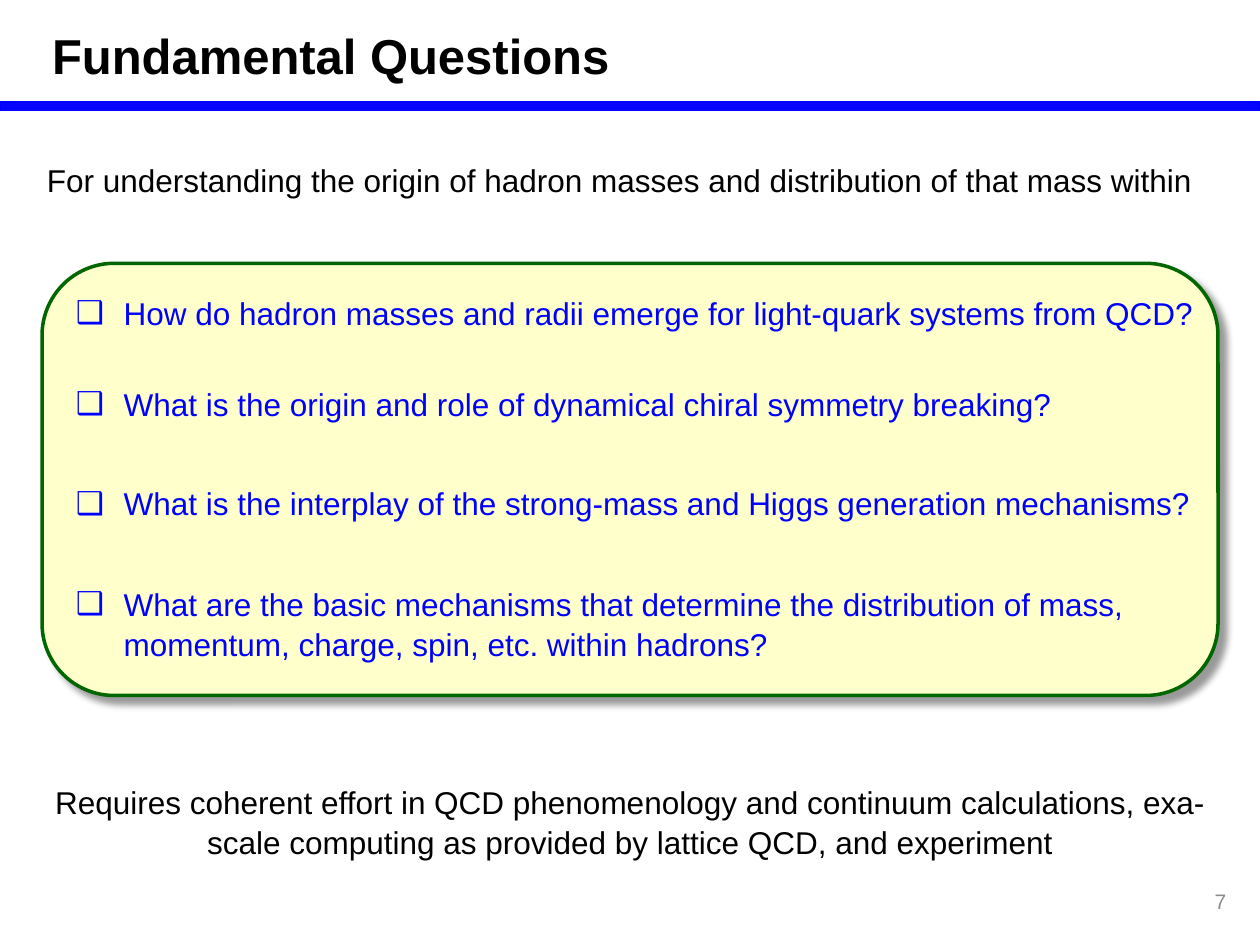
from lxml import etree
from pptx import Presentation
from pptx.dml.color import RGBColor
from pptx.enum.shapes import MSO_SHAPE
from pptx.enum.text import MSO_ANCHOR, PP_ALIGN
from pptx.oxml.ns import qn
from pptx.util import Inches, Pt

LEFT, MID, RIGHT = PP_ALIGN.LEFT, PP_ALIGN.CENTER, PP_ALIGN.RIGHT
TOP, CENTER = MSO_ANCHOR.TOP, MSO_ANCHOR.MIDDLE
RECT, ROUND = MSO_SHAPE.RECTANGLE, MSO_SHAPE.ROUNDED_RECTANGLE
FONT = "Arial"
WIDE, HIGH = 10, 7.5
HANG = 0.38
INSET = 0.17
COLORS = {
    "ink": "000000",
    "blue": "0000FF",
    "rule": "0505FF",
    "cream": "FFFFCC",
    "green": "006600",
    "gray": "8C8C8C",
}
ITEMS = [
    (0.18, 0.52, "How do hadron masses and radii emerge for light-quark systems from QCD?"),
    (0.9, 0.52, "What is the origin and role of dynamical chiral symmetry breaking?"),
    (1.69, 0.52, "What is the interplay of the strong-mass and Higgs generation mechanisms?"),
    (2.49, 0.88, "What are the basic mechanisms that determine the distribution of mass, "
                 "momentum, charge, spin, etc. within hadrons?"),
]


def paint(name):
    return RGBColor.from_string(COLORS[name])


def add_mark(para):
    props = para._p.get_or_add_pPr()
    props.set("marL", str(Inches(HANG)))
    props.set("indent", str(-Inches(HANG)))
    etree.SubElement(props, qn("a:buFont")).set("typeface", FONT)
    etree.SubElement(props, qn("a:buChar")).set("char", "❑")


def add_text(slide, box, text, size=18, color="ink", align=LEFT,
             bold=False, anchor=TOP, mark=False, pitch=1.05):
    frame = slide.shapes.add_textbox(*map(Inches, box)).text_frame
    frame.word_wrap = True
    frame.vertical_anchor = anchor
    para = frame.paragraphs[0]
    if mark:
        add_mark(para)
    para.alignment = align
    para.line_spacing = pitch
    run = para.add_run()
    run.text = text
    run.font.name = FONT
    run.font.size = Pt(size)
    run.font.bold = bold
    run.font.color.rgb = paint(color)


def add_block(slide, kind, box, fill, line, width):
    shape = slide.shapes.add_shape(kind, *map(Inches, box))
    shape.shadow.inherit = False
    shape.fill.solid()
    shape.fill.fore_color.rgb = paint(fill)
    shape.line.color.rgb = paint(line)
    shape.line.width = Pt(width)
    return shape


def add_shade(shape):
    effects = shape._element.spPr.find(qn("a:effectLst"))
    shade = etree.SubElement(effects, qn("a:outerShdw"), blurRad=str(Pt(4)),
                             dist=str(Pt(6)), dir=str(45 * 60000),
                             algn="tl", rotWithShape="0")
    color = etree.SubElement(shade, qn("a:srgbClr"), val=COLORS["ink"])
    etree.SubElement(color, qn("a:alpha"), val="40000")


def add_head(slide, box):
    left, top, width, height = box
    add_text(slide, (left, top + 0.15, width * 0.525, 0.57), "Fundamental Questions",
             size=28, align=MID, bold=True, pitch=1)
    add_block(slide, RECT, (left, top + height - 0.07, width, 0.07),
              "rule", "blue", 0.75)


def add_panel(slide, box):
    left, top, width, height = box
    add_shade(add_block(slide, ROUND, box, "cream", "green", 2))
    for drop, tall, text in ITEMS:
        add_text(slide, (left + INSET, top + drop, width, tall), text,
                 color="blue", mark=True)


def add_foot(slide, box):
    add_text(slide, box, "7", size=12, color="gray", align=RIGHT,
             anchor=CENTER, pitch=1)


def main():
    deck = Presentation()
    deck.slide_width, deck.slide_height = Inches(WIDE), Inches(HIGH)
    slide = deck.slides.add_slide(deck.slide_layouts[6])
    edge = WIDE / 30
    span = WIDE - 2 * edge
    add_head(slide, (0, 0, WIDE, 0.88))
    add_text(slide, (WIDE / 40, 1.21, span, 0.52),
             "For understanding the origin of hadron masses and distribution "
             "of that mass within", align=MID)
    add_panel(slide, (edge, 2.09, span, 3.43))
    add_text(slide, (edge, 6.15, span, 0.81),
             "Requires coherent effort in QCD phenomenology and continuum calculations, "
             "exa-scale computing as provided by lattice QCD, and experiment", align=MID)
    add_foot(slide, (7.58, 6.95, 2.25, 0.4))
    deck.save("out.pptx")


if __name__ == "__main__":
    main()
